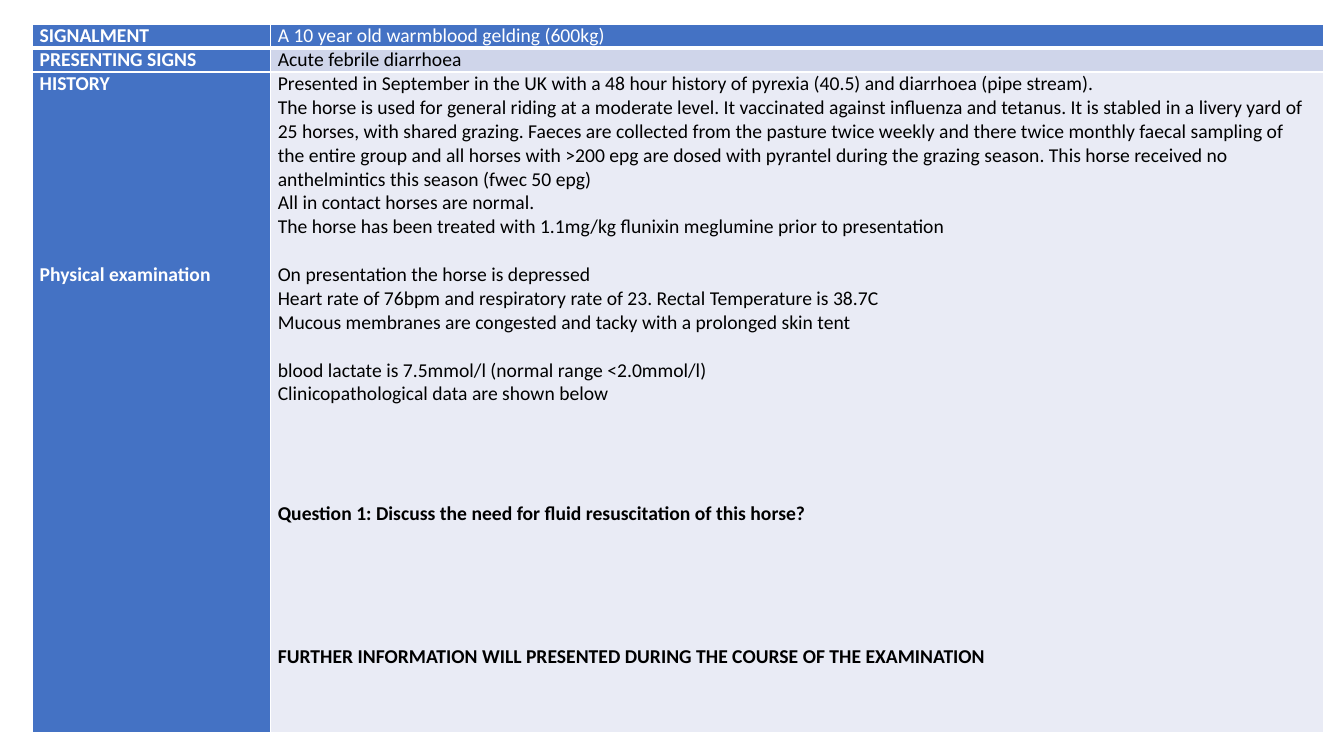
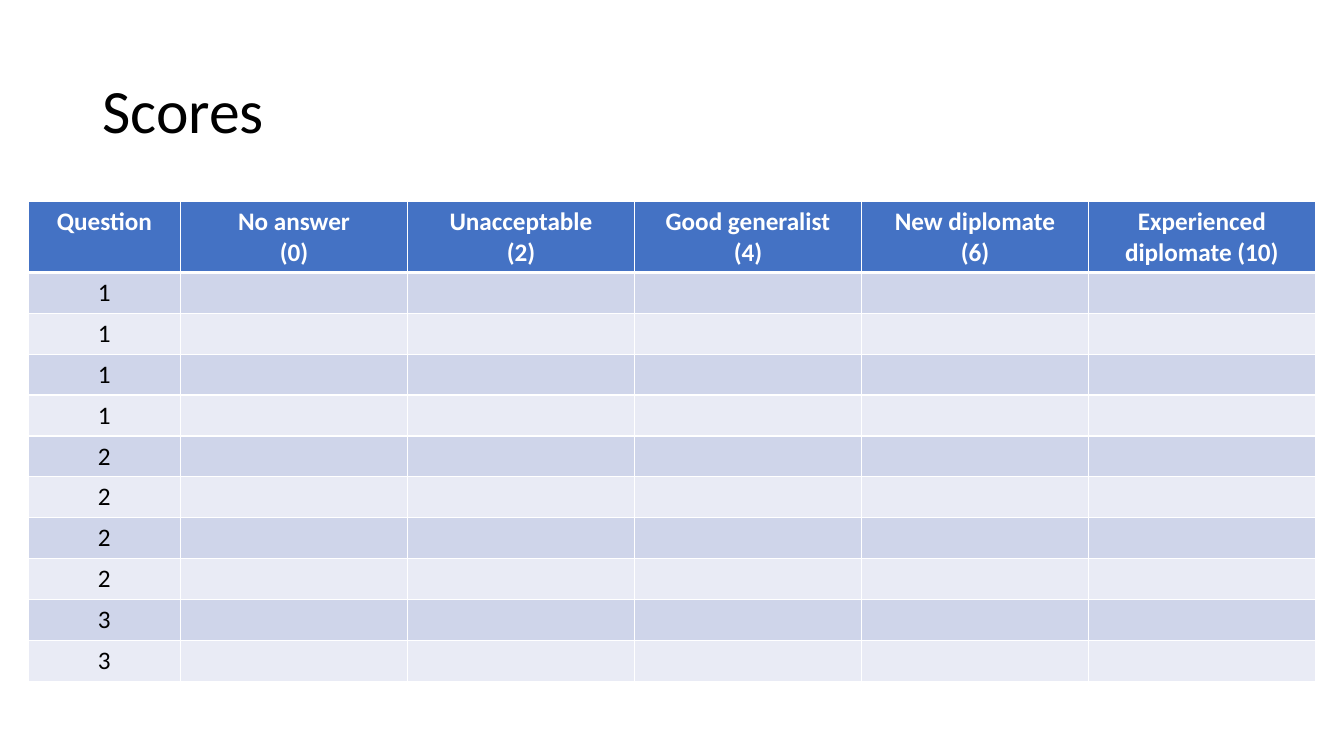
from typing import NamedTuple

from lxml.etree import SubElement
from pptx import Presentation
from pptx.dml.color import RGBColor
from pptx.enum.text import MSO_ANCHOR, PP_ALIGN
from pptx.oxml.ns import qn
from pptx.util import Cm, Pt

FONT = "Calibri"
BLACK = RGBColor(0x00, 0x00, 0x00)
WHITE = RGBColor(0xFF, 0xFF, 0xFF)
BLUE = RGBColor(0x44, 0x72, 0xC4)
BANDS = (RGBColor(0xE9, 0xEB, 0xF5), RGBColor(0xCF, 0xD5, 0xEA))

LINE_PITCH = 1.22  # line height of the font, as a multiple of its size


class Line(NamedTuple):
    """A paragraph; gap is the space above it, counted in lines."""
    text: str
    bold: bool = False
    gap: int = 0


class Grid(NamedTuple):
    left: float
    top: float
    widths: list[float]
    heights: list[float]
    size: int
    margin_x: float
    margin_y: float
    align: PP_ALIGN
    label_column: bool


CASE_GRID = Grid(0.81, 0.61, [6, 26.54], [0.6, 0.6, 16.64], 14,
                 0.19, 0, PP_ALIGN.LEFT, True)
CASE_ROWS = [
    [[Line("SIGNALMENT", True)],
     [Line("A 10 year old warmblood gelding (600kg)")]],
    [[Line("PRESENTING SIGNS", True)],
     [Line("Acute febrile diarrhoea")]],
    [[Line("HISTORY", True),
      Line("Physical examination", True, 7)],
     [Line("Presented in September in the UK with a 48 hour history of pyrexia "
           "(40.5) and diarrhoea (pipe stream)."),
      Line("The horse is used for general riding at a moderate level. It "
           "vaccinated against influenza and tetanus. It is stabled in a livery "
           "yard of 25 horses, with shared grazing. Faeces are collected from "
           "the pasture twice weekly and there twice monthly faecal sampling of "
           "the entire group and all horses with >200 epg are dosed with "
           "pyrantel during the grazing season. This horse received no "
           "anthelmintics this season (fwec 50 epg)"),
      Line("All in contact horses are normal."),
      Line("The horse has been treated with 1.1mg/kg flunixin meglumine prior "
           "to presentation"),
      Line("On presentation the horse is depressed", gap=1),
      Line("Heart rate of 76bpm and respiratory rate of 23. Rectal Temperature "
           "is 38.7C"),
      Line("Mucous membranes are congested and tacky with a prolonged skin tent"),
      Line("blood lactate is 7.5mmol/l (normal range <2.0mmol/l)", gap=1),
      Line("Clinicopathological data are shown below"),
      Line("Question 1: Discuss the need for fluid resuscitation of this horse?",
           True, 4),
      Line("FURTHER INFORMATION WILL PRESENTED DURING THE COURSE OF THE "
           "EXAMINATION", True, 5)]],
]

GRADES = [["Question"], ["No answer", "(0)"], ["Unacceptable", "(2)"],
          ["Good generalist", "(4)"], ["New diplomate", "(6)"],
          ["Experienced diplomate (10)"]]
QUESTIONS = "1111222233"
SCORE_GRID = Grid(0.71, 5.08, [3.84] + [5.72] * 5,
                  [1.77] + [1.03] * len(QUESTIONS), 18,
                  0.25, 0.13, PP_ALIGN.CENTER, False)
SCORE_ROWS = [[[Line(text, True) for text in grade] for grade in GRADES]]
SCORE_ROWS += [[[Line(q)]] + [[] for _ in GRADES[1:]] for q in QUESTIONS]


def set_borders(cell, top: float, bottom: float) -> None:
    """Draw white borders, 1 pt wide at the sides."""
    tc_pr = cell._tc.get_or_add_tcPr()
    widths = {"a:lnL": 1, "a:lnR": 1, "a:lnT": top, "a:lnB": bottom}
    for i, (tag, width) in enumerate(widths.items()):
        ln = SubElement(tc_pr, qn(tag), w=str(Pt(width)))
        fill = SubElement(ln, qn("a:solidFill"))
        SubElement(fill, qn("a:srgbClr"), val=str(WHITE))
        tc_pr.insert(i, ln)


def write_lines(tf, lines: list[Line], grid: Grid, color: RGBColor) -> None:
    for i, line in enumerate(lines):
        p = tf.paragraphs[0] if i == 0 else tf.add_paragraph()
        p.text = line.text
        p.alignment = grid.align
        p.space_before = Pt(round(line.gap * grid.size * LINE_PITCH, 1))
        p.font.name = FONT
        p.font.size = Pt(grid.size)
        p.font.bold = line.bold
        p.font.color.rgb = color


def add_grid(s, grid: Grid, rows: list[list[list[Line]]]) -> None:
    table = s.shapes.add_table(
        len(grid.heights), len(grid.widths), Cm(grid.left), Cm(grid.top),
        Cm(sum(grid.widths)), Cm(sum(grid.heights))).table
    for column, width in zip(table.columns, grid.widths):
        column.width = Cm(width)
    for row, height in zip(table.rows, grid.heights):
        row.height = Cm(height)
    for i, row in enumerate(rows):
        for j, lines in enumerate(row):
            cell = table.cell(i, j)
            is_heading = i == 0 or (grid.label_column and j == 0)
            cell.margin_left = cell.margin_right = Cm(grid.margin_x)
            cell.margin_top = cell.margin_bottom = Cm(grid.margin_y)
            cell.fill.solid()
            cell.fill.fore_color.rgb = BLUE if is_heading else BANDS[i % 2]
            set_borders(cell, 3 if i == 1 else 1, 3 if i == 0 else 1)
            write_lines(cell.text_frame, lines, grid,
                        WHITE if is_heading else BLACK)


def add_title(s, text: str) -> None:
    tf = s.shapes.add_textbox(Cm(2.33), Cm(1.01), Cm(29.21), Cm(3.68)).text_frame
    tf.word_wrap = True
    tf.vertical_anchor = MSO_ANCHOR.MIDDLE
    p = tf.paragraphs[0]
    p.text = text
    p.line_spacing = 0.9
    p.font.name = FONT
    p.font.size = Pt(44)
    p.font.color.rgb = BLACK


def main() -> None:
    prs = Presentation()
    prs.slide_width, prs.slide_height = Cm(33.87), Cm(19.05)
    blank = prs.slide_layouts[6]

    add_grid(prs.slides.add_slide(blank), CASE_GRID, CASE_ROWS)

    s = prs.slides.add_slide(blank)
    add_title(s, "Scores")
    add_grid(s, SCORE_GRID, SCORE_ROWS)

    prs.save("out.pptx")


if __name__ == "__main__":
    main()
